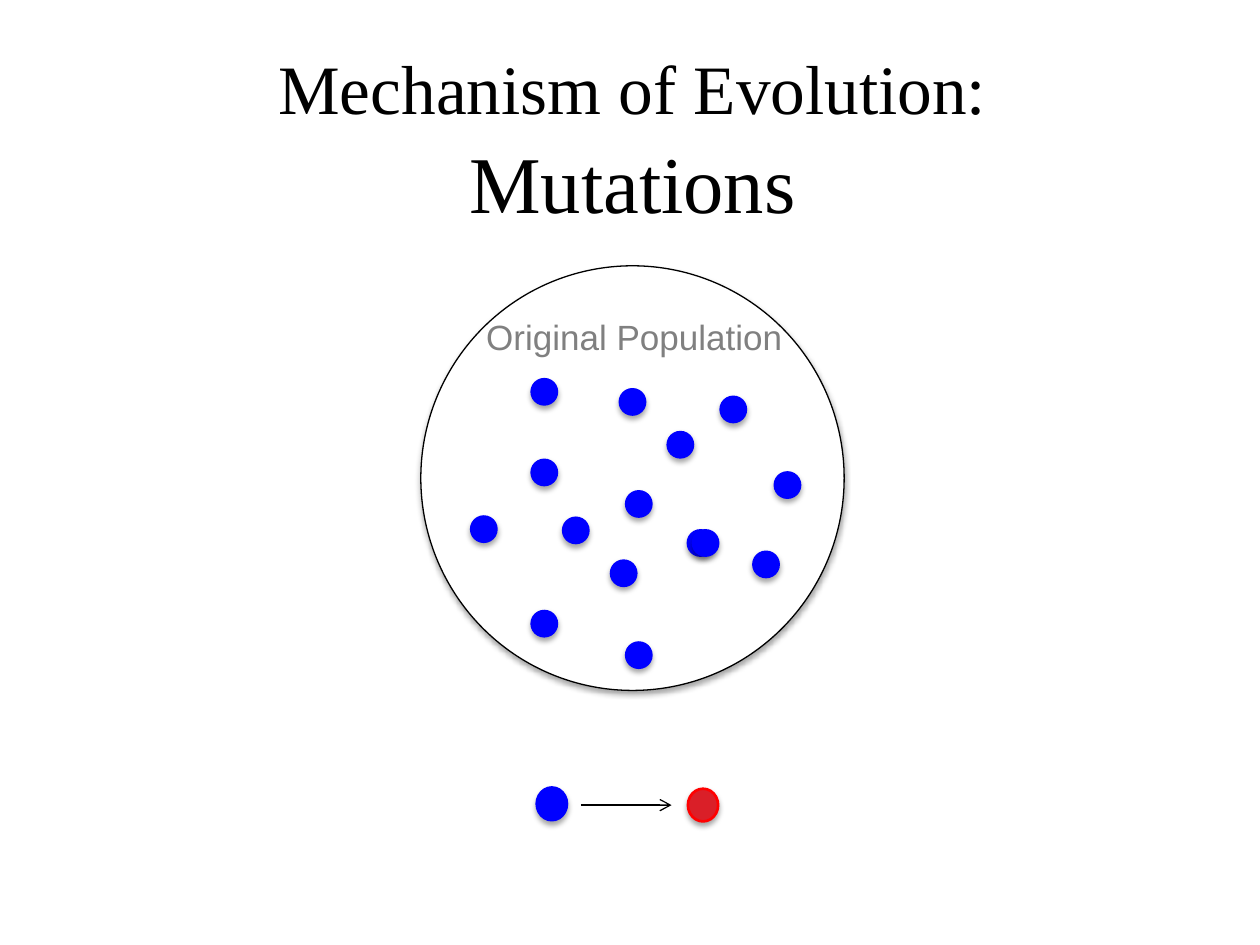
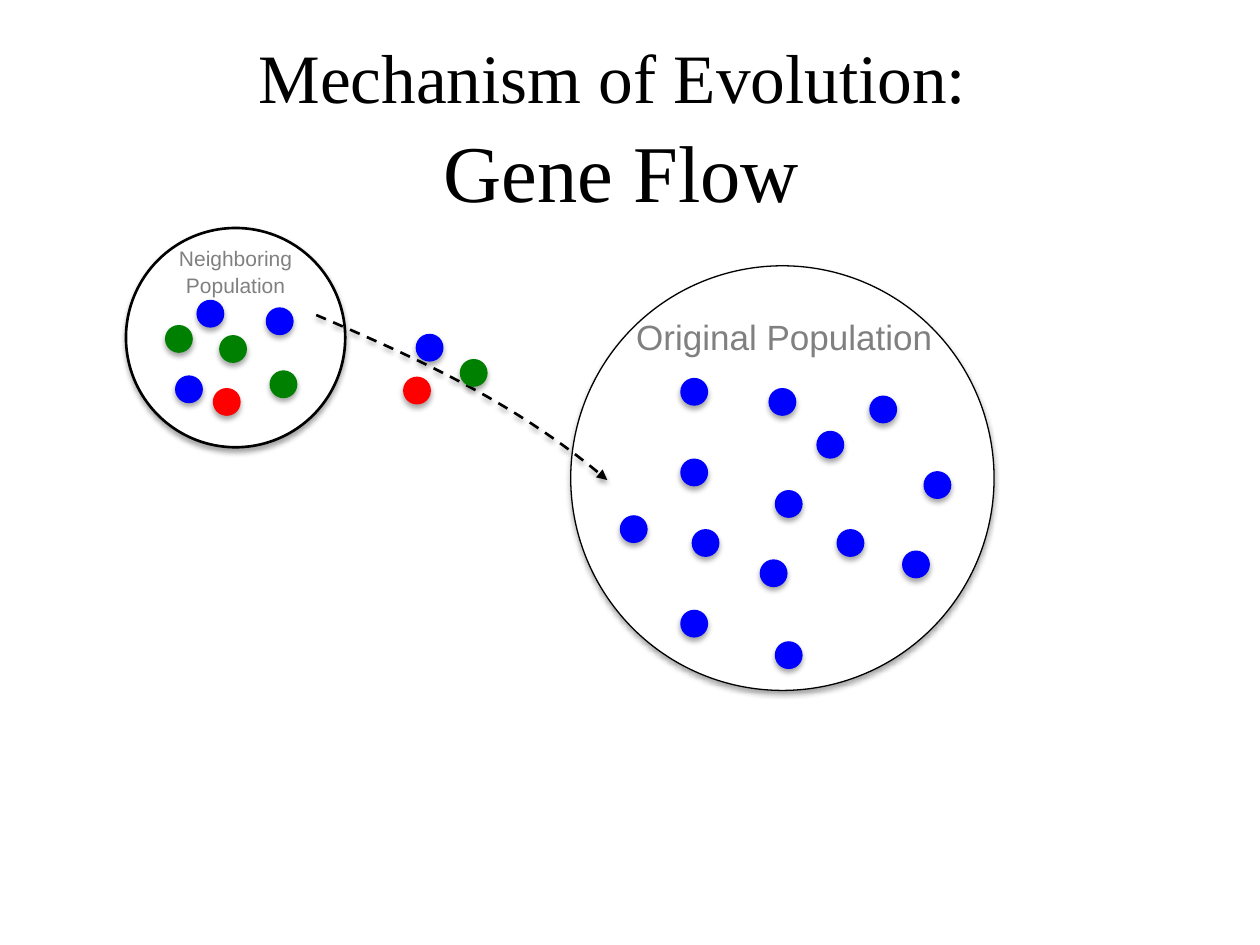
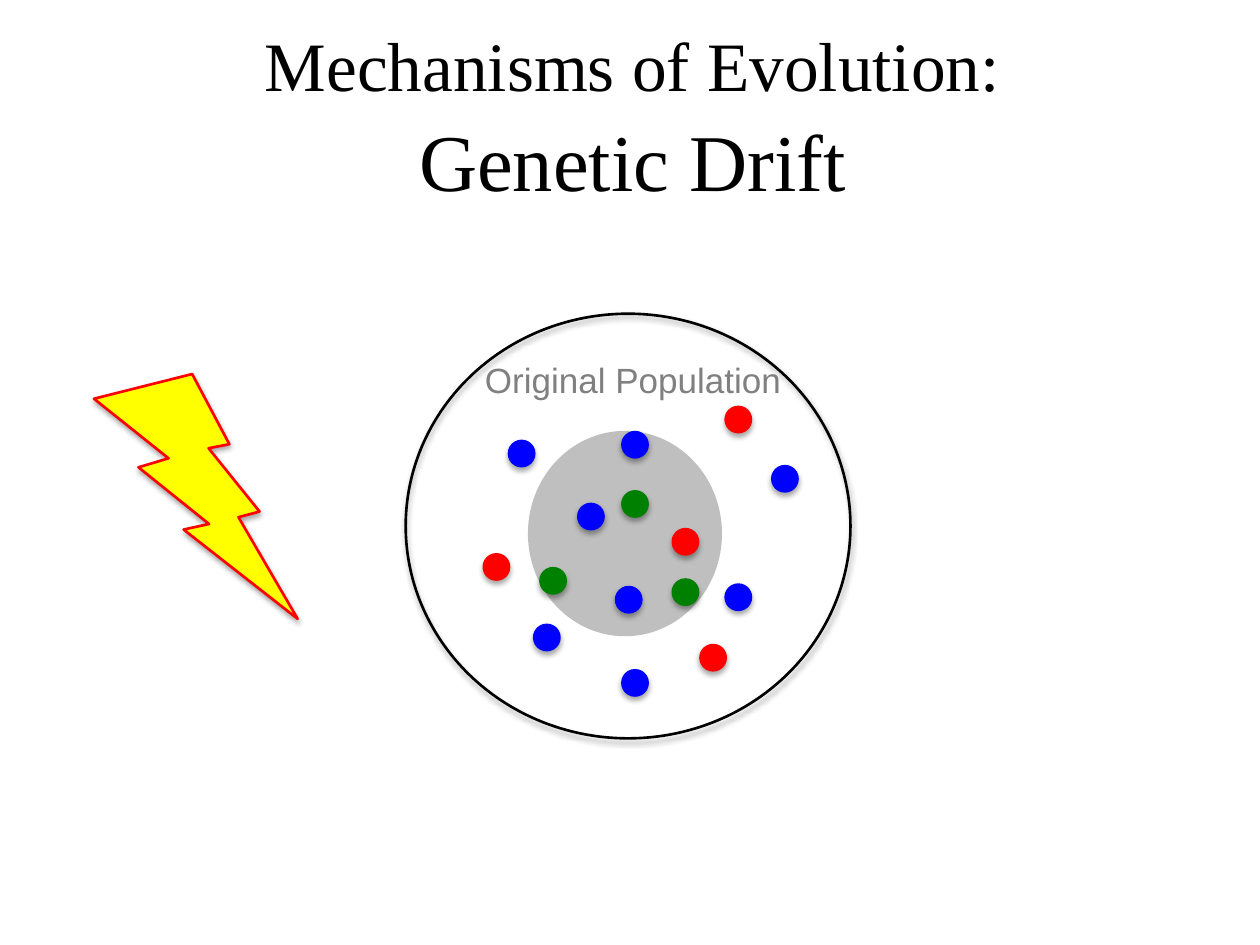
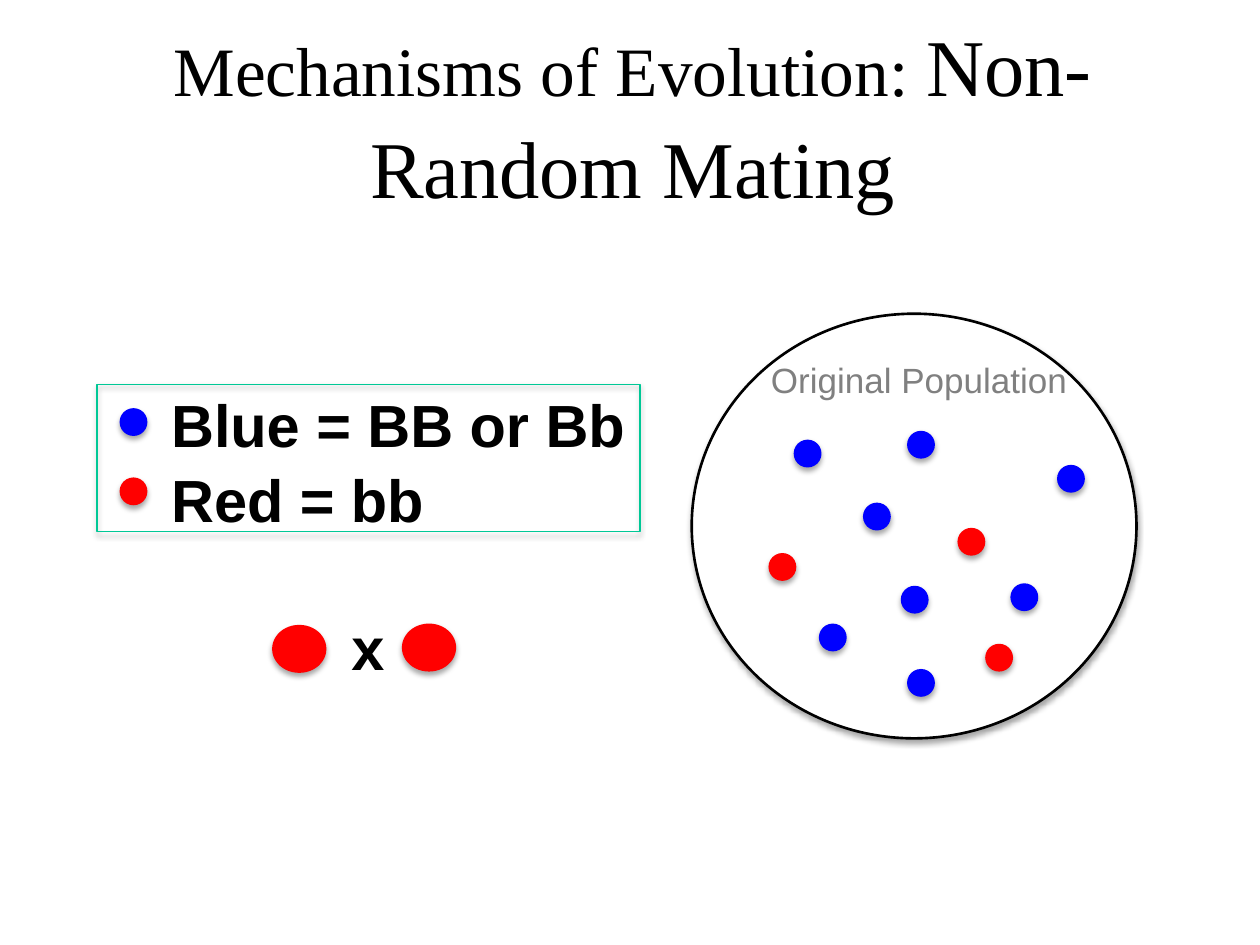
from lxml import etree
from pptx import Presentation
from pptx import util as u
from pptx.dml.color import RGBColor
from pptx.enum import dml, shapes, text
from pptx.oxml.ns import qn

PX = u.Inches(1) // 100

COLORS = {
    "black": "000000",
    "white": "FFFFFF",
    "blue": "0000FF",
    "red": "FF0000",
    "crimson": "DA1F28",
    "green": "008000",
    "yellow": "FFFF00",
    "label": "808080",
    "survivors": "BFBFBF",
    "legend": "00C896",
}
TITLE_FONT, BODY_FONT = "Times New Roman", "Arial"
DOT = 20
OVAL = shapes.MSO_SHAPE.OVAL

# Dot positions are measured from the top left of the population's circle.
UNIFORM_SIZE = (336, 337)
UNIFORM_DOTS = {
    "blue": [(158, 98), (196, 132), (163, 179), (88, 90), (88, 154), (151, 234), (238, 104),
             (212, 210), (264, 227), (281, 164), (163, 299), (88, 274), (40, 199)],
}
MIXED_SIZE = (353, 337)
MIXED_DOTS = {
    "blue": [(172, 94), (254, 215), (102, 247), (82, 101),
             (167, 217), (172, 283), (137, 151), (291, 121)],
    "red": [(234, 263), (212, 171), (62, 191)],
}


def color(name):
    return RGBColor.from_string(COLORS[name])


def px(*lengths):
    return [length * PX for length in lengths]


def cast_shadow(shape):
    shape.shadow.inherit = False
    effects = shape.element.spPr.find(qn("a:effectLst"))
    shadow = etree.SubElement(effects, qn("a:outerShdw"), blurRad=str(u.Pt(3)), dist=str(u.Pt(2)),
                              dir="5400000", rotWithShape="0")
    tint = etree.SubElement(shadow, qn("a:srgbClr"), val=COLORS["black"])
    etree.SubElement(tint, qn("a:alpha"), val="35000")


def paint(shape, fill=None, line=None, width=1.5):
    if fill:
        shape.fill.solid()
        shape.fill.fore_color.rgb = color(fill)
    else:
        shape.fill.background()
    if line:
        shape.line.color.rgb = color(line)
        shape.line.width = u.Pt(width)
    else:
        shape.line.fill.background()


def add_figure(slide, kind, box, fill=None, line=None, width=1.5, shadow=True):
    figure = slide.shapes.add_shape(kind, *px(*box))
    paint(figure, fill, line, width)
    if shadow:
        cast_shadow(figure)
    else:
        figure.shadow.inherit = False
    return figure


def add_dots(slide, dots, origin=(0, 0)):
    """Draw individuals, given as {colour: [(x, y), ...]} from the origin."""
    for name, places in dots.items():
        for x, y in places:
            add_figure(slide, OVAL, (origin[0] + x, origin[1] + y, DOT, DOT), name, name)


def style_font(font, family, size, name="black", bold=False):
    font.name, font.size, font.bold = family, u.Pt(size), bold
    font.color.rgb = color(name)


def add_frame(slide, box):
    frame = slide.shapes.add_textbox(*px(*box)).text_frame
    frame.word_wrap = True
    frame.margin_left = frame.margin_right = frame.margin_top = frame.margin_bottom = 10 * PX
    return frame


def add_text(slide, box, lines, size, name="black", bold=False, align=text.PP_ALIGN.LEFT):
    frame = add_frame(slide, box)
    for number, line in enumerate(lines):
        paragraph = frame.add_paragraph() if number else frame.paragraphs[0]
        paragraph.text = line
        paragraph.alignment = align
        paragraph.line_spacing = 1.05
        style_font(paragraph.font, BODY_FONT, size, name, bold)


def add_label(slide, box, lines, size):
    add_text(slide, box, lines, size, "label", align=text.PP_ALIGN.CENTER)


def add_title(slide, lead, mechanism, left=96, top=27, line_break=False):
    frame = add_frame(slide, (left, top, 812, 125))
    frame.margin_top = frame.margin_bottom = 5 * PX
    frame.vertical_anchor = text.MSO_ANCHOR.MIDDLE
    paragraph = frame.paragraphs[0]
    paragraph.alignment = text.PP_ALIGN.CENTER
    paragraph.line_spacing = 1.05
    for words, size in ((lead, 39.6), (mechanism, 46)):
        if line_break and words == mechanism:
            paragraph.add_line_break()
        run = paragraph.add_run()
        run.text = words
        style_font(run.font, TITLE_FONT, size)


def add_population(slide, left, top, size, dots, label_at, fill="white", width=1.5):
    add_figure(slide, OVAL, (left, top, *size), fill, "black", width)
    add_label(slide, (left + label_at[0], top + label_at[1], 267, 50), ["Original Population"], 20)
    add_dots(slide, dots, (left, top))


def add_uniform_population(slide, left):
    add_population(slide, left, 211, UNIFORM_SIZE, UNIFORM_DOTS, (36, 28), width=0.75)


def add_mixed_population(slide, left, fill="white"):
    add_population(slide, left, 249, MIXED_SIZE, MIXED_DOTS, (47, 24), fill)


def add_arrowhead(line, kind):
    etree.SubElement(line.element.spPr.find(qn("a:ln")), qn("a:tailEnd"), type=kind)


def add_arrow(slide, start, end):
    arrow = slide.shapes.add_connector(shapes.MSO_CONNECTOR.STRAIGHT, *px(*start, *end))
    arrow.line.color.rgb = color("black")
    arrow.line.width = u.Pt(0.75)
    add_arrowhead(arrow, "arrow")
    etree.SubElement(arrow.element.spPr, qn("a:effectLst"))


def add_curved_arrow(slide, start, *controls_and_end):
    """Draw a dashed cubic curve through two control points to its end."""
    builder = slide.shapes.build_freeform(*start, scale=PX)
    builder.add_line_segments(controls_and_end, close=False)
    curve = builder.convert_to_shape()
    outline = next(curve.element.iter(qn("a:path")))
    bezier = etree.SubElement(outline, qn("a:cubicBezTo"))
    for segment in outline.findall(qn("a:lnTo")):
        bezier.append(segment[0])
        outline.remove(segment)
    paint(curve, line="black")
    curve.line.dash_style = dml.MSO_LINE.DASH
    add_arrowhead(curve, "triangle")
    cast_shadow(curve)


def build_mutations(slide):
    add_title(slide, "Mechanism of Evolution: ", "Mutations", top=45)
    add_uniform_population(slide, 334)
    add_dots(slide, {"blue": [(447, 411), (550, 421)]})
    add_figure(slide, OVAL, (426, 625, 24, 26), "blue", "blue")
    add_arrow(slide, (461, 639), (533, 639))
    add_figure(slide, OVAL, (546, 626, 24, 26), "crimson", "red")


def build_gene_flow(slide):
    add_title(slide, "Mechanism of Evolution: ", "Gene Flow", 87, 36, line_break=True)
    add_uniform_population(slide, 453)
    add_dots(slide, {"blue": [(550, 421)]})
    add_figure(slide, OVAL, (100, 181, 174, 174), "white", "black")
    add_label(slide, (87, 184, 200, 75), ["Neighboring", "Population"], 12)
    add_curved_arrow(slide, (251, 250), (330, 284), (409, 319), (482, 381))
    neighbors = {
        "blue": [(140, 299), (212, 245), (157, 239)],
        "green": [(175, 267), (132, 259), (215, 295)],
        "red": [(170, 309)],
    }
    migrants = {"red": [(321, 300)], "blue": [(331, 266)], "green": [(366, 286)]}
    add_dots(slide, neighbors)
    add_dots(slide, migrants)


def build_genetic_drift(slide):
    add_figure(slide, OVAL, (419, 342, 154, 163), "survivors", shadow=False)
    add_mixed_population(slide, 322, fill=None)
    add_dots(slide, {"red": [(576, 323)], "green": [(534, 460), (494, 390), (429, 451)]})
    add_title(slide, "Mechanisms of Evolution: ", "Genetic Drift")
    bolt = add_figure(slide, shapes.MSO_SHAPE.LIGHTNING_BOLT, (64, 299, 188, 178), "yellow", "red")
    bolt.rotation = 9.4


def build_non_random_mating(slide):
    add_mixed_population(slide, 549)
    add_title(slide, "Mechanisms of Evolution: ", "Non-Random Mating")
    add_text(slide, (126, 295, 399, 172), ["Blue = BB or Bb", "Red = bb"], 34, bold=True)
    add_dots(slide, {"blue": [(96, 325)], "red": [(96, 380)]})
    add_figure(slide, shapes.MSO_SHAPE.RECTANGLE, (77, 305, 431, 117), line="legend", width=0.75)
    add_text(slide, (269, 472, 51, 108), ["x"], 34, bold=True)
    for left, top in ((320, 496), (217, 497)):
        add_figure(slide, OVAL, (left, top, 41, 36), "red", "red")


def main():
    deck = Presentation()
    deck.slide_width, deck.slide_height = px(1000, 750)
    blank = deck.slide_layouts[6]
    for build in (build_mutations, build_gene_flow, build_genetic_drift, build_non_random_mating):
        build(deck.slides.add_slide(blank))
    deck.save("out.pptx")


if __name__ == "__main__":
    main()
